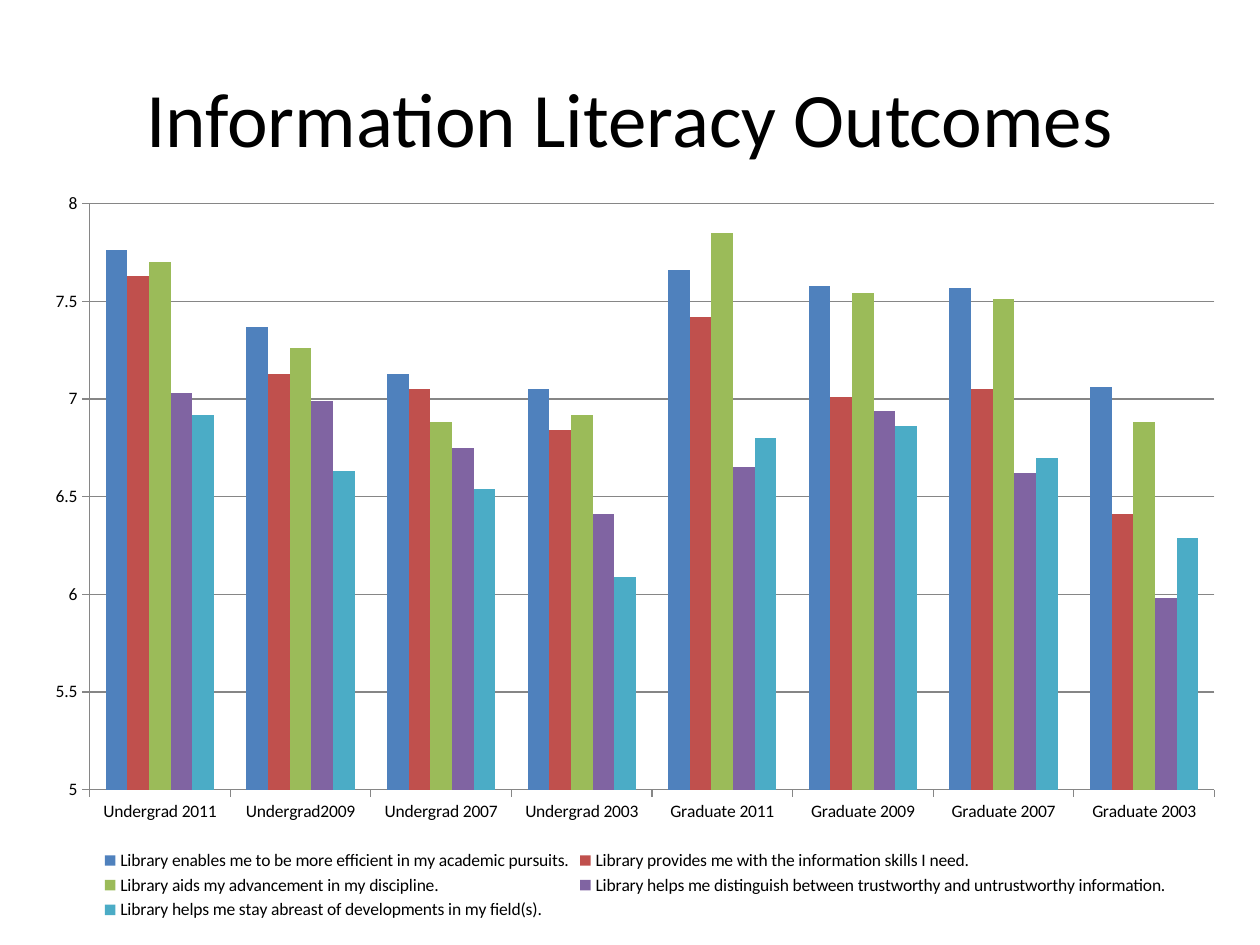
from pptx import Presentation
from pptx.chart.data import CategoryChartData
from pptx.dml.color import RGBColor
from pptx.enum.chart import XL_CHART_TYPE as ChartType, XL_LEGEND_POSITION as LegendPosition
from pptx.enum.chart import XL_TICK_MARK as TickMark
from pptx.enum.text import MSO_ANCHOR as Anchor, PP_ALIGN as Align
from pptx.util import Pt

BLACK = RGBColor(0x00, 0x00, 0x00)
GRAY = RGBColor(0x86, 0x86, 0x86)
BLUE = RGBColor(0x4F, 0x81, 0xBD)
RED = RGBColor(0xC0, 0x50, 0x4D)
GREEN = RGBColor(0x9B, 0xBB, 0x59)
PURPLE = RGBColor(0x80, 0x64, 0xA2)
TEAL = RGBColor(0x4B, 0xAC, 0xC6)

GROUPS = ["Undergrad 2011", "Undergrad2009", "Undergrad 2007", "Undergrad 2003",
          "Graduate 2011", "Graduate 2009", "Graduate 2007", "Graduate 2003"]
OUTCOMES = [
    ("Library enables me to be more efficient in my academic pursuits.", BLUE,
     [7.76, 7.37, 7.13, 7.05, 7.66, 7.58, 7.57, 7.06]),
    ("Library provides me with the information skills I need.", RED,
     [7.63, 7.13, 7.05, 6.84, 7.42, 7.01, 7.05, 6.41]),
    ("Library aids my advancement in my discipline.", GREEN,
     [7.7, 7.26, 6.88, 6.92, 7.85, 7.54, 7.51, 6.88]),
    ("Library helps me distinguish between trustworthy and untrustworthy information.", PURPLE,
     [7.03, 6.99, 6.75, 6.41, 6.65, 6.94, 6.62, 5.98]),
    ("Library helps me stay abreast of developments in my field(s).", TEAL,
     [6.92, 6.63, 6.54, 6.09, 6.8, 6.86, 6.7, 6.29]),
]


def write_text(text_frame, text, size=10, font="Calibri", color=BLACK,
               align=Align.LEFT, anchor=Anchor.TOP):
    text_frame.word_wrap = True
    text_frame.vertical_anchor = anchor
    paragraph = text_frame.paragraphs[0]
    paragraph.alignment = align
    run = paragraph.add_run()
    run.text = text
    run.font.size = Pt(size)
    run.font.name = font
    run.font.color.rgb = color


class SlideBuilder:
    def __init__(self, slide, font="Calibri", color=BLACK, line_color=GRAY):
        self.slide = slide
        self.font = font
        self.color = color
        self.line_color = line_color

    def text(self, text, left, top, width, height, **style):
        box = self.slide.shapes.add_textbox(Pt(left), Pt(top), Pt(width), Pt(height))
        write_text(box.text_frame, text, font=self.font, color=self.color, **style)

    def style_line(self, line):
        line.color.rgb = self.line_color
        line.width = Pt(0.75)

    def column_chart(self, categories, series_rows, left, top, width, height,
                     minimum, maximum, step, size=10):
        data = CategoryChartData()
        data.categories = categories
        for name, _, values in series_rows:
            data.add_series(name, values)
        chart = self.slide.shapes.add_chart(
            ChartType.COLUMN_CLUSTERED, Pt(left), Pt(top), Pt(width), Pt(height), data).chart
        chart.has_title = False
        chart.font.name = self.font
        chart.font.size = Pt(size)
        chart.font.color.rgb = self.color

        plot = chart.plots[0]
        plot.vary_by_categories = False
        plot.gap_width = 150
        plot.overlap = 0
        for series, (_, color, _) in zip(plot.series, series_rows):
            series.format.fill.solid()
            series.format.fill.fore_color.rgb = color
            series.invert_if_negative = False

        for axis in (chart.category_axis, chart.value_axis):
            axis.major_tick_mark = TickMark.OUTSIDE
            axis.minor_tick_mark = TickMark.NONE
            self.style_line(axis.format.line)
        value_axis = chart.value_axis
        value_axis.minimum_scale = minimum
        value_axis.maximum_scale = maximum
        value_axis.major_unit = step
        value_axis.has_major_gridlines = True
        self.style_line(value_axis.major_gridlines.format.line)

        chart.has_legend = True
        chart.legend.position = LegendPosition.BOTTOM
        chart.legend.include_in_layout = False


def main():
    presentation = Presentation()
    presentation.slide_width = Pt(720)
    presentation.slide_height = Pt(540)
    builder = SlideBuilder(presentation.slides.add_slide(presentation.slide_layouts[6]))
    builder.text("Information Literacy Outcomes", 36, 21.6, 648, 90,
                 size=44, align=Align.CENTER, anchor=Anchor.MIDDLE)
    builder.column_chart(GROUPS, OUTCOMES, 18, 102.24, 689.76, 426.24,
                         minimum=5, maximum=8, step=0.5)
    presentation.save("out.pptx")


if __name__ == "__main__":
    main()
